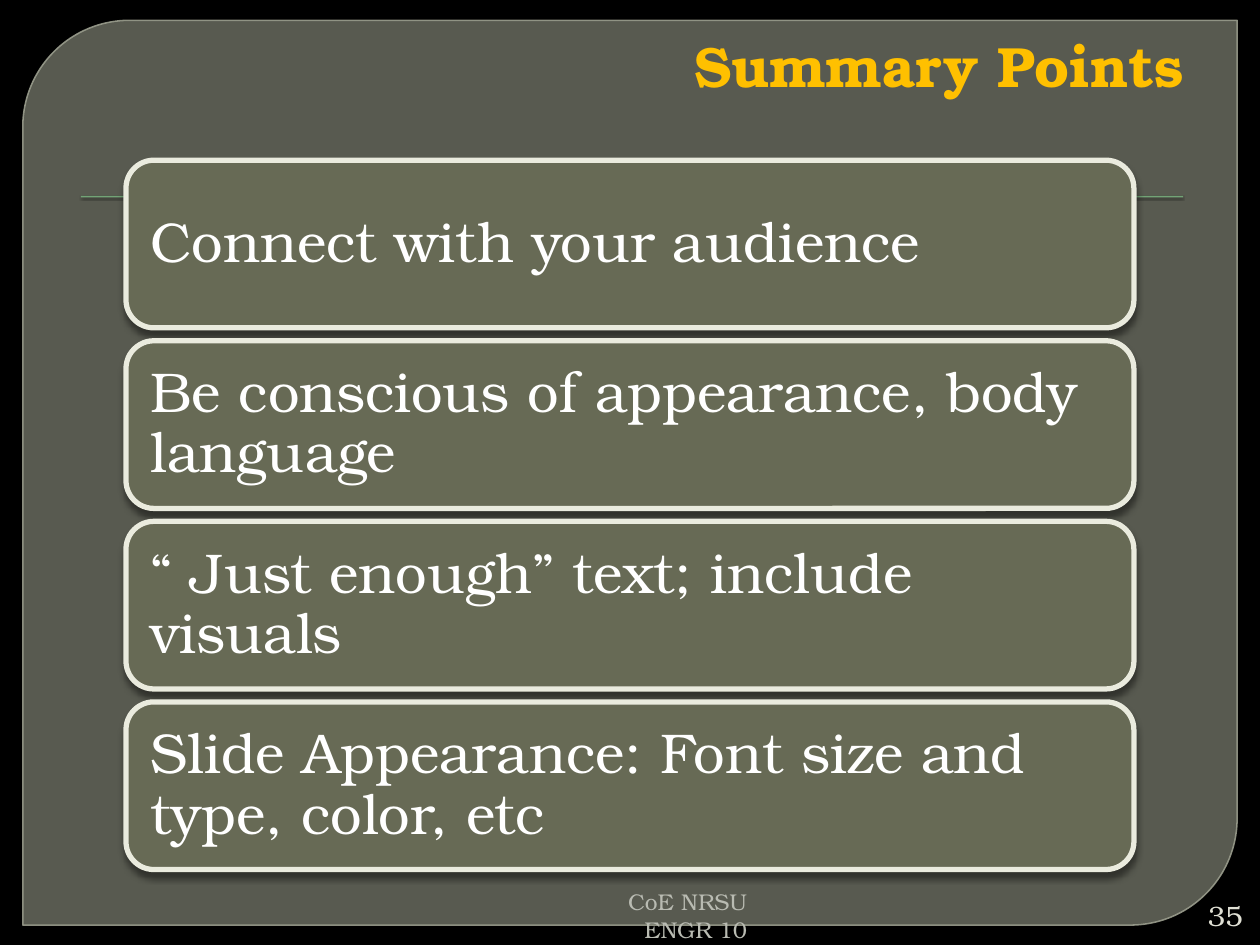
from dataclasses import dataclass

import lxml.etree
import pptx
import pptx.dml.color
import pptx.enum.shapes
import pptx.enum.text
import pptx.oxml.ns
import pptx.util

Cm = pptx.util.Cm
Shape = pptx.enum.shapes.MSO_SHAPE
Align = pptx.enum.text.PP_ALIGN
Anchor = pptx.enum.text.MSO_ANCHOR
qn = pptx.oxml.ns.qn


@dataclass(frozen=True)
class Theme:
    font: str = "TeX Gyre Bonum"
    background: str = "000000"
    panel: str = "888B7B"
    panel_edge: str = "9DA090"
    rule: str = "72A376"
    card: str = "676A55"
    card_edge: str = "EAEBDE"
    shadow: str = "000000"
    title: str = "FFC000"
    body: str = "FFFFFF"
    footer: str = "B9BBB2"
    number: str = "E0E0D4"
    title_size: float = 32.4
    body_size: float = 32
    footer_size: float = 13
    number_size: float = 16


def rgb(value):
    return pptx.dml.color.RGBColor.from_string(value)


def set_alpha(color, percent):
    lxml.etree.SubElement(color, qn("a:alpha"), val=str(percent * 1000))


class SlideBuilder:
    def __init__(self, slide, theme):
        self.slide = slide
        self.theme = theme
        slide.background.fill.solid()
        slide.background.fill.fore_color.rgb = rgb(theme.background)

    def set_text(self, frame, text, size, color, align, anchor, bold=False):
        frame.text = text
        frame.word_wrap = True
        frame.auto_size = pptx.enum.text.MSO_AUTO_SIZE.NONE
        frame.vertical_anchor = anchor
        for paragraph in frame.paragraphs:
            paragraph.alignment = align
            for run in paragraph.runs:
                run.font.name = self.theme.font
                run.font.size = pptx.util.Pt(size)
                run.font.bold = bold
                run.font.color.rgb = rgb(color)

    def title(self, text, left, top, width, height):
        heading = self.slide.shapes.title
        heading.left, heading.top = Cm(left), Cm(top)
        heading.width, heading.height = Cm(width), Cm(height)
        self.set_text(heading.text_frame, text, self.theme.title_size,
                      self.theme.title, Align.RIGHT, Anchor.BOTTOM, bold=True)
        self.slide.shapes.element.append(heading.element)

    def label(self, text, left, top, width, height, size, color, anchor):
        box = self.slide.shapes.add_textbox(Cm(left), Cm(top), Cm(width), Cm(height))
        self.set_text(box.text_frame, text, size, color, Align.RIGHT, anchor)

    def block(self, preset, left, top, width, height, fill, edge=None, weight=0):
        block = self.slide.shapes.add_shape(
            preset, Cm(left), Cm(top), Cm(width), Cm(height))
        block.shadow.inherit = False
        block.fill.solid()
        block.fill.fore_color.rgb = rgb(fill)
        if edge:
            block.line.color.rgb = rgb(edge)
            block.line.width = pptx.util.Pt(weight)
        else:
            block.line.fill.background()
        return block

    def cast_shadow(self, block, blur, distance, percent):
        effects = block.element.spPr.find(qn("a:effectLst"))
        shadow = lxml.etree.SubElement(
            effects, qn("a:outerShdw"), blurRad=str(pptx.util.Pt(blur)),
            dist=str(pptx.util.Pt(distance)), dir="5400000", rotWithShape="0")
        color = lxml.etree.SubElement(shadow, qn("a:srgbClr"), val=self.theme.shadow)
        set_alpha(color, percent)

    def panel(self, left, top, width, height):
        panel = self.block(Shape.ROUND_2_DIAG_RECTANGLE, left, top, width, height,
                           self.theme.panel, self.theme.panel_edge, 0.87)
        panel.adjustments[0] = 0.118
        panel.adjustments[1] = 0
        fill_color, edge_color = panel.element.spPr.iter(qn("a:srgbClr"))
        set_alpha(fill_color, 65)
        set_alpha(edge_color, 88)

    def rule(self, left, top, width, height):
        rule = self.block(Shape.RECTANGLE, left, top, width, height, self.theme.rule)
        self.cast_shadow(rule, 1, 1, 75)

    def card(self, text, left, top, width, height):
        card = self.block(Shape.ROUNDED_RECTANGLE, left, top, width, height,
                          self.theme.card, self.theme.card_edge, 3)
        self.cast_shadow(card, 4, 3, 43)
        frame = card.text_frame
        frame.margin_left = frame.margin_right = Cm(0.33)
        frame.margin_top = frame.margin_bottom = Cm(0.33)
        self.set_text(frame, text, self.theme.body_size, self.theme.body,
                      Align.LEFT, Anchor.MIDDLE)
        frame.paragraphs[0].line_spacing = 0.9


def main():
    presentation = pptx.Presentation()
    presentation.slide_width, presentation.slide_height = Cm(25.4), Cm(19.05)
    theme = Theme()
    builder = SlideBuilder(
        presentation.slides.add_slide(presentation.slide_layouts[5]), theme)

    builder.panel(0.46, 0.41, 24.48, 18.24)
    builder.rule(1.63, 3.95, 22.22, 0.03)
    builder.title("Summary Points", 2.54, 0.43, 21.59, 1.7)
    builder.label("CoE NRSU\nENGR 10", 3.61, 17.78, 11.7, 0.76,
                  theme.footer_size, theme.footer, Anchor.TOP)
    builder.label("35", 24, 18.08, 1.3, 0.76,
                  theme.number_size, theme.number, Anchor.MIDDLE)

    summary_points = (
        "Connect with your audience",
        "Be conscious of appearance, body language",
        "“ Just enough” text; include visuals",
        "Slide Appearance: Font size and type, color, etc",
    )
    first_top, card_height, gap = 3.23, 3.38, 0.26
    for row, point in enumerate(summary_points):
        builder.card(point, 2.54, first_top + row * (card_height + gap),
                     20.32, card_height)

    presentation.save("out.pptx")


if __name__ == "__main__":
    main()
